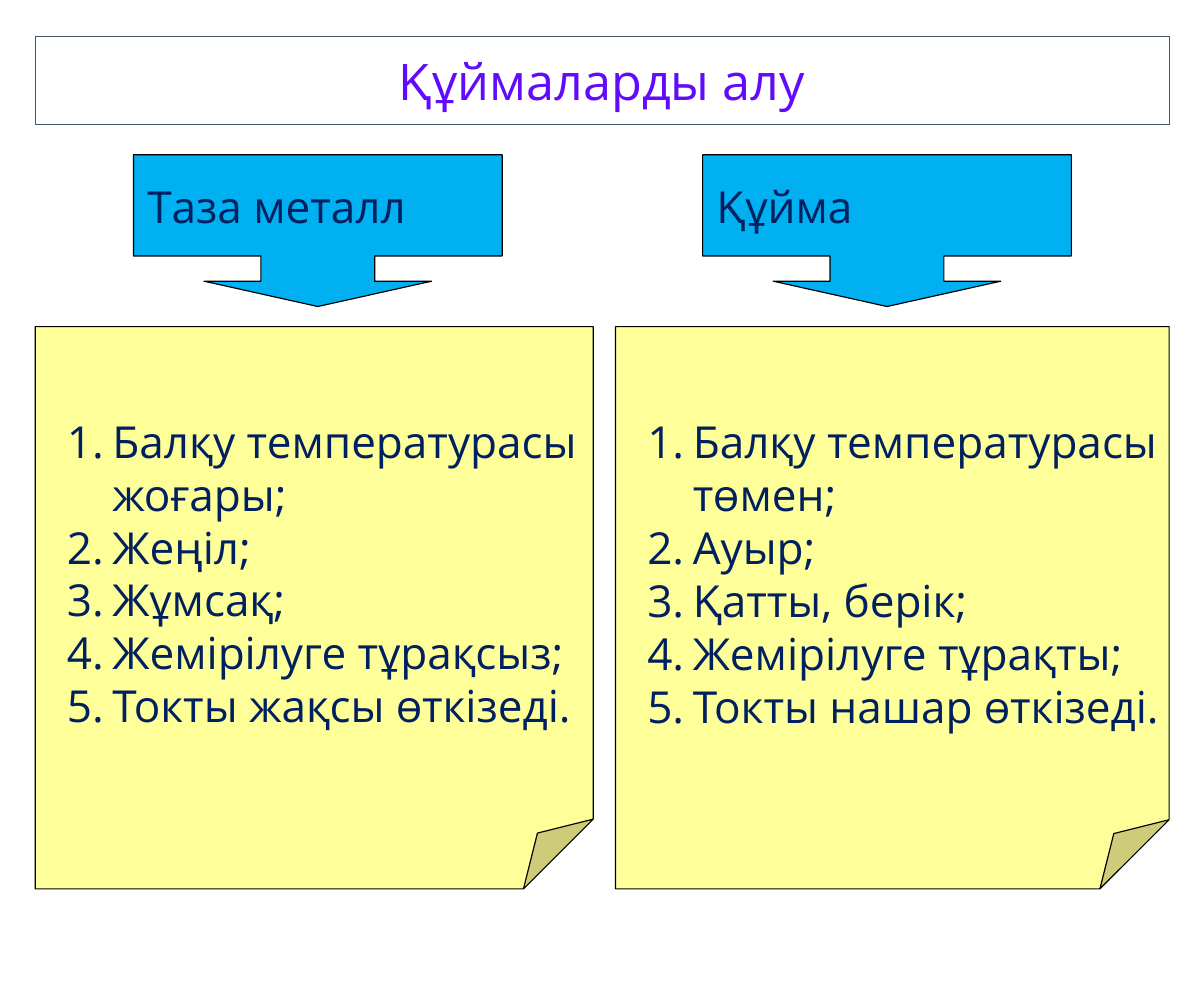
from lxml.etree import SubElement
from pptx import Presentation
from pptx.dml.color import RGBColor
from pptx.enum.shapes import MSO_SHAPE as Shape
from pptx.enum.text import MSO_ANCHOR as Anchor, MSO_AUTO_SIZE as AutoSize, PP_ALIGN as Align
from pptx.oxml.ns import qn
from pptx.util import Cm, Pt

TITLE = "Құймаларды алу"
COLUMNS = [
    {
        "heading": "Таза металл",
        "left": 0.79,
        "width": 12.5,
        "callout_left": 2.99,
        "items": [
            "Балқу температурасы жоғары;",
            "Жеңіл;",
            "Жұмсақ;",
            "Жемірілуге тұрақсыз;",
            "Токты жақсы өткізеді.",
        ],
    },
    {
        "heading": "Құйма",
        "left": 13.79,
        "width": 12.4,
        "callout_left": 15.74,
        "items": [
            "Балқу температурасы төмен;",
            "Ауыр;",
            "Қатты, берік;",
            "Жемірілуге тұрақты;",
            "Токты нашар өткізеді.",
        ],
    },
]

FONT = "Open Sans"
VIOLET = RGBColor(0x62, 0x0B, 0xFC)
NAVY = RGBColor(0x00, 0x20, 0x60)
SLATE = RGBColor(0x44, 0x54, 0x6A)
BLUE = RGBColor(0x00, 0xB0, 0xF0)
YELLOW = RGBColor(0xFF, 0xFF, 0x99)
BLACK = RGBColor(0x00, 0x00, 0x00)

TITLE_AREA = (0.79, 0.81, 25.4, 1.98)
CALLOUT_TOP, CALLOUT_WIDTH, CALLOUT_HEIGHT = 3.47, 8.26, 3.4
CALLOUT_GUIDES = {"adj1": 75000, "adj2": 75000, "adj3": 16700, "adj4": 66700}
NOTE_TOP, NOTE_HEIGHT = 7.32, 12.6
NOTE_GUIDES = {"adj": 12500}
HANGING = Cm(1.02)

TITLE_FONT = {"name": FONT, "size": Pt(32), "color": VIOLET}
BODY_FONT = {"name": FONT, "size": Pt(28), "color": NAVY}
CALLOUT_FRAME = {"margin_left": Cm(0.31), "margin_right": Cm(0.31)}
NOTE_FRAME = {"margin_left": Cm(0.71), "margin_right": Cm(0)}
SHARED_FRAME = {
    "margin_top": Cm(0.31),
    "margin_bottom": Cm(0.31),
    "word_wrap": True,
    "auto_size": AutoSize.NONE,
    "vertical_anchor": Anchor.MIDDLE,
}


def apply(target, values):
    for name, value in values.items():
        if name == "color":
            target.color.rgb = value
        else:
            setattr(target, name, value)


def outline(shape, color):
    shape.line.color.rgb = color
    shape.line.width = Pt(0.75)


def write(shape, lines, font, align, frame):
    apply(shape.text_frame, {**SHARED_FRAME, **frame})
    shape.text_frame.text = "\n".join(lines)
    for para in shape.text_frame.paragraphs:
        para.alignment = align
        for span in para.runs:
            apply(span.font, font)


def add_box(page, kind, area, fill, guides):
    box = page.shapes.add_shape(kind, *map(Cm, area))
    box.shadow.inherit = False
    box.fill.solid()
    box.fill.fore_color.rgb = fill
    outline(box, BLACK)
    geometry = box._element.spPr.find(qn("a:prstGeom"))
    for child in list(geometry):
        geometry.remove(child)
    guide_list = SubElement(geometry, qn("a:avLst"))
    for name, value in guides.items():
        SubElement(guide_list, qn("a:gd"), name=name, fmla=f"val {value}")
    return box


def number(para):
    properties = para._p.get_or_add_pPr()
    properties.set("marL", str(HANGING))
    properties.set("indent", str(-HANGING))
    SubElement(properties, qn("a:buFont"), typeface="+mj-lt")
    SubElement(properties, qn("a:buAutoNum"), type="arabicPeriod")


def add_title(page):
    title = page.shapes.title
    title.left, title.top, title.width, title.height = map(Cm, TITLE_AREA)
    outline(title, SLATE)
    write(title, [TITLE], TITLE_FONT, Align.CENTER, {})


def add_column(page, column):
    callout_area = (column["callout_left"], CALLOUT_TOP, CALLOUT_WIDTH, CALLOUT_HEIGHT)
    callout = add_box(page, Shape.DOWN_ARROW_CALLOUT, callout_area, BLUE, CALLOUT_GUIDES)
    write(callout, [column["heading"]], BODY_FONT, Align.LEFT, CALLOUT_FRAME)

    note_area = (column["left"], NOTE_TOP, column["width"], NOTE_HEIGHT)
    note = add_box(page, Shape.FOLDED_CORNER, note_area, YELLOW, NOTE_GUIDES)
    write(note, column["items"], BODY_FONT, Align.LEFT, NOTE_FRAME)
    for para in note.text_frame.paragraphs:
        number(para)


def main():
    deck = Presentation()
    deck.slide_width, deck.slide_height = Cm(26.97), Cm(22.23)
    page = deck.slides.add_slide(deck.slide_layouts[5])
    add_title(page)
    for column in COLUMNS:
        add_column(page, column)
    deck.save("out.pptx")


if __name__ == "__main__":
    main()
